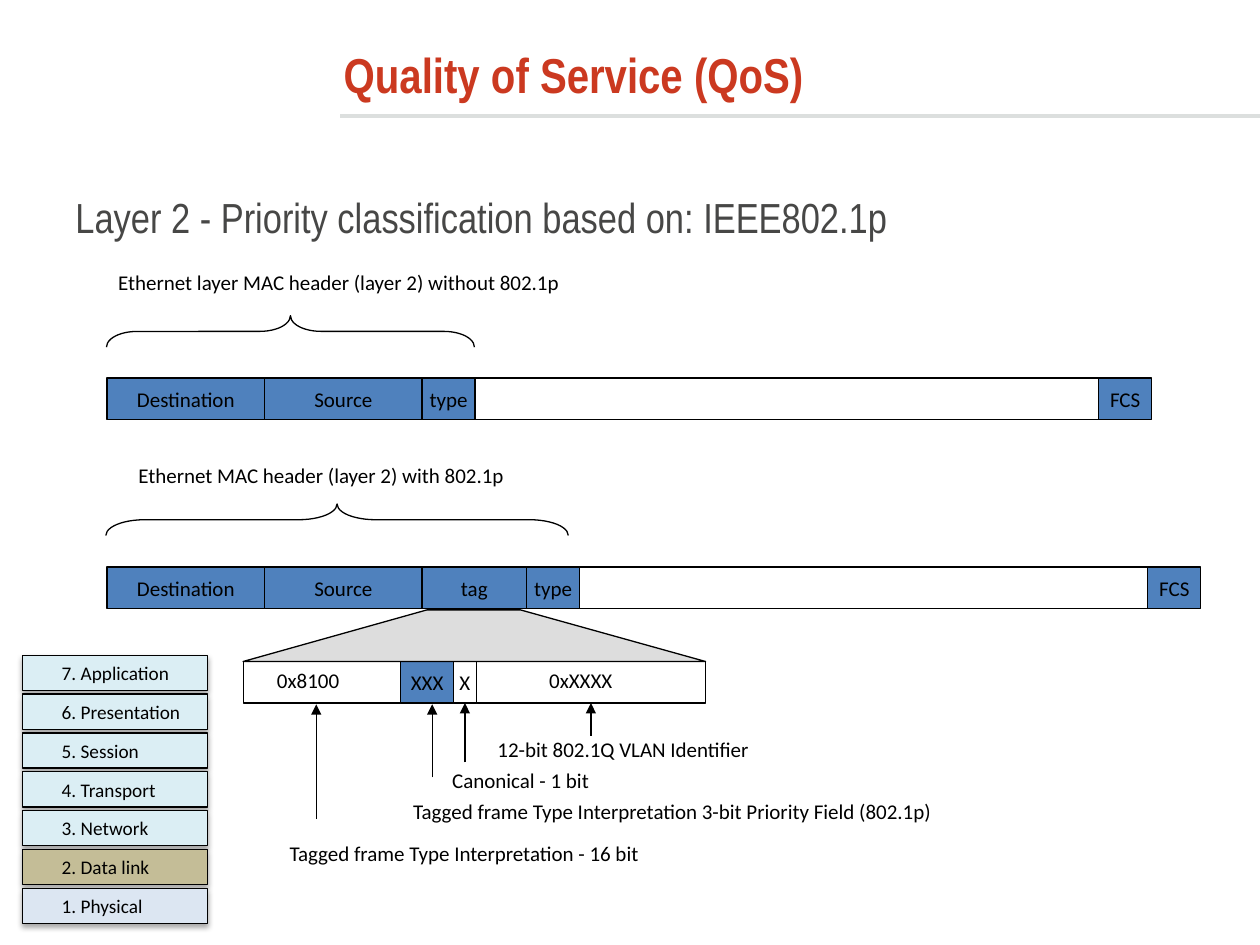
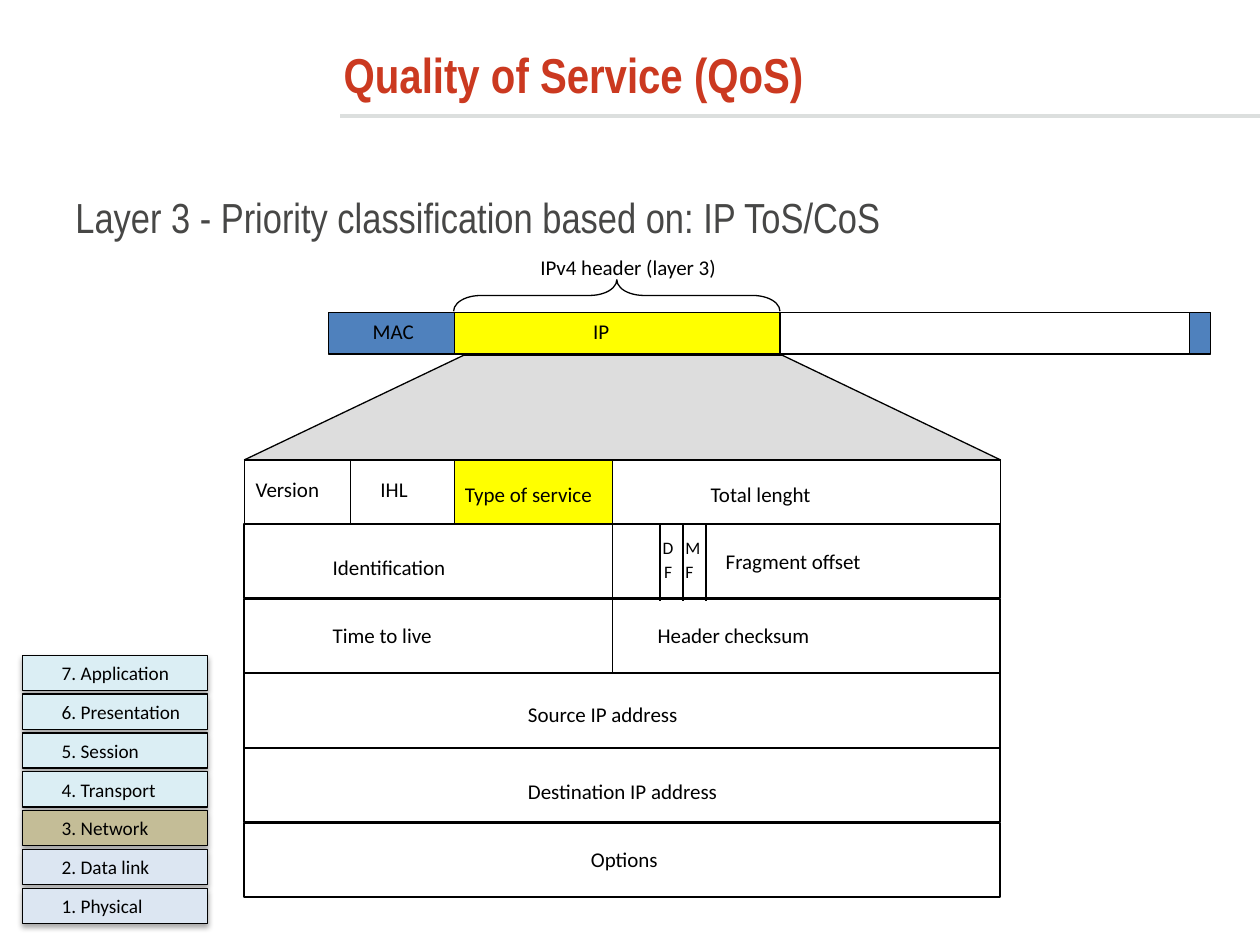
from lxml.etree import SubElement
from pptx import Presentation
from pptx.dml.color import RGBColor
from pptx.enum.shapes import MSO_CONNECTOR, MSO_SHAPE
from pptx.enum.text import MSO_ANCHOR, PP_ALIGN
from pptx.oxml.ns import qn
from pptx.util import Inches, Pt

RECTANGLE = MSO_SHAPE.RECTANGLE
LEFT_BRACE = MSO_SHAPE.LEFT_BRACE
STRAIGHT = MSO_CONNECTOR.STRAIGHT
MIDDLE = MSO_ANCHOR.MIDDLE
LEFT, CENTER = PP_ALIGN.LEFT, PP_ALIGN.CENTER

BLACK = RGBColor(0x00, 0x00, 0x00)
WHITE = RGBColor(0xFF, 0xFF, 0xFF)
RED = RGBColor(0xCB, 0x39, 0x20)
DARK_GRAY = RGBColor(0x47, 0x47, 0x46)
RULE_GRAY = RGBColor(0xDC, 0xDF, 0xDE)
ZOOM_GRAY = RGBColor(0xDD, 0xDD, 0xDD)
BLUE = RGBColor(0x4F, 0x81, 0xBD)
YELLOW = RGBColor(0xFF, 0xFF, 0x00)
UPPER_LAYER = RGBColor(0xDB, 0xEE, 0xF4)
CURRENT_LAYER = RGBColor(0xC4, 0xBD, 0x97)
LOWER_LAYER = RGBColor(0xDC, 0xE6, 0xF2)

LAYERS = ["Application", "Presentation", "Session", "Transport",
          "Network", "Data link", "Physical"]


def add_cell(shapes, x, y, w, h, fill, text="", size=12, line=0.75, align=CENTER):
    cell = shapes.add_shape(RECTANGLE, Inches(x), Inches(y), Inches(w), Inches(h))
    cell.shadow.inherit = False
    cell.fill.solid()
    cell.fill.fore_color.rgb = fill
    cell.line.color.rgb = BLACK
    cell.line.width = Pt(line)
    frame = cell.text_frame
    frame.word_wrap = False
    frame.vertical_anchor = MIDDLE
    frame.text = text
    paragraph = frame.paragraphs[0]
    paragraph.alignment = align
    paragraph.font.name = "Calibri"
    paragraph.font.size = Pt(size)
    paragraph.font.color.rgb = BLACK
    return cell


def add_label(slide, x, y, w, h, text, size=12, color=BLACK, font="Calibri", inset=True):
    frame = slide.shapes.add_textbox(Inches(x), Inches(y), Inches(w), Inches(h)).text_frame
    frame.word_wrap = False
    if not inset:
        frame.margin_left = frame.margin_right = frame.margin_top = frame.margin_bottom = 0
    frame.text = text
    run_font = frame.paragraphs[0].runs[0].font
    run_font.name = font
    run_font.size = Pt(size)
    run_font.color.rgb = color
    return frame


prs = Presentation()
prs.slide_width = Inches(10)
prs.slide_height = Inches(7.5)

slides = []
for current, topic in [(2, "IEEE802.1p"), (3, "IP ToS/CoS")]:
    slide = prs.slides.add_slide(prs.slide_layouts[6])
    slides.append(slide)
    subtitle = f"Layer {current} - Priority classification based on: {topic}"
    add_label(slide, 0.5, 1.47, 8.9, 0.67, subtitle, 24, DARK_GRAY,
              "Arial Narrow").word_wrap = True
    title = add_label(slide, 2.63, 0.15, 6.87, 0.88, "Quality of Service (QoS)", 28, RED,
                      "Arial Narrow")
    title.word_wrap = True
    title.vertical_anchor = MIDDLE
    title.paragraphs[0].runs[0].font.bold = True

    stack = slide.shapes.add_group_shape()
    for i, layer in enumerate(LAYERS):
        number = 7 - i
        fill = UPPER_LAYER if number > current else LOWER_LAYER
        if number == current:
            fill = CURRENT_LAYER
        level = add_cell(stack.shapes, 0.18, 5.2 + 1.85 * i / 6, 1.47, 0.28, fill,
                         f"{number}. {layer}", 11, align=LEFT)
        level.text_frame.word_wrap = True
        level.text_frame.margin_left = Inches(0.31)
        effects = level.element.spPr.find(qn("a:effectLst"))
        shadow = SubElement(effects, qn("a:outerShdw"), blurRad=str(Pt(3.1)),
                            dist=str(Pt(1.8)), dir="5400000", rotWithShape="0")
        shade = SubElement(shadow, qn("a:srgbClr"), val="000000")
        SubElement(shade, qn("a:alpha"), val="35000")
layer2, layer3 = slides

frame_rows = [
    (layer2, 0.85, 3, 0.33, [(1.25, BLUE, "Destination"), (1.25, BLUE, "Source"),
                             (0.42, BLUE, "type"), (4.95, WHITE, ""), (0.42, BLUE, "FCS")]),
    (layer2, 0.85, 4.5, 0.33, [(1.25, BLUE, "Destination"), (1.25, BLUE, "Source"),
                               (0.83, BLUE, "tag"), (0.42, BLUE, "type"),
                               (4.51, WHITE, ""), (0.42, BLUE, "FCS")]),
    (layer3, 2.61, 2.48, 0.33, [(1, BLUE, ""), (2.58, YELLOW, ""), (3.25, WHITE, ""),
                                (0.17, BLUE, "")]),
    (layer3, 1.94, 3.65, 0.51, [(0.84, WHITE, ""), (0.83, WHITE, ""), (1.25, YELLOW, ""),
                                (3.08, WHITE, "")]),
    (layer2, 1.93, 5.25, 0.33, [(1.25, WHITE, ""), (0.42, BLUE, "XXX"), (0.18, WHITE, "X"),
                                (1.82, WHITE, "")]),
]
for slide, x, y, h, cells in frame_rows:
    tag_fields = []
    for w, fill, text in cells:
        tag_fields.append(add_cell(slide.shapes, x, y, w, h, fill, text))
        x += w
canonical_bit, vlan_id = tag_fields[2:]

for i in range(5):
    add_cell(layer3.shapes, 1.94, 4.16 + 2.37 * i / 4, 6, 0.59, WHITE, line=1.13)

zooms = [(layer2, 5.25, 4.84, [1.93, 3.39, 4.13, 5.6]),
         (layer3, 3.65, 2.82, [1.94, 3.68, 6.21, 7.94])]
for slide, bottom, top, corners in zooms:
    outline = [(Inches(x), Inches(y)) for x, y in zip(corners, [bottom, top, top, bottom])]
    builder = slide.shapes.build_freeform(*outline[0])
    builder.add_line_segments(outline[1:], close=True)
    zoom = builder.convert_to_shape()
    zoom.shadow.inherit = False
    zoom.fill.solid()
    zoom.fill.fore_color.rgb = ZOOM_GRAY
    zoom.line.color.rgb = BLACK
    zoom.line.width = Pt(0.75)

braces = [(layer2, 2.18, 1.17, 2.92, 0.97),
          (layer2, 2.55, 2.29, 3.67, 1.22),
          (layer3, 4.77, 1.05, 2.59, 0.86)]
for slide, x, y, span, curl in braces:
    brace = slide.shapes.add_shape(LEFT_BRACE, Inches(x), Inches(y), Inches(0.25), Inches(span))
    brace.rotation = 90
    brace.adjustments[0] = curl
    brace.adjustments[1] = 0.5
    brace.shadow.inherit = False
    brace.fill.background()
    brace.line.color.rgb = BLACK
    brace.line.width = Pt(0.75)

captions = [
    (layer2, 0.84, 2.09, 4, "Ethernet layer MAC header (layer 2) without 802.1p"),
    (layer2, 1, 3.62, 3.36, "Ethernet MAC header (layer 2) with 802.1p"),
    (layer2, 2.1, 5.25, 0.74, "0x8100"),
    (layer2, 4.26, 5.25, 0.82, "0xXXXX"),
    (layer2, 3.85, 5.8, 2.37, "12-bit 802.1Q VLAN Identifier"),
    (layer2, 3.49, 6.04, 1.4, "Canonical - 1 bit"),
    (layer2, 3.18, 6.29, 5, "Tagged frame Type Interpretation 3-bit Priority Field (802.1p)"),
    (layer2, 2.2, 6.62, 3.24, "Tagged frame Type Interpretation - 16 bit"),
    (layer3, 4.19, 1.97, 1.65, "IPv4 header (layer 3)"),
    (layer3, 2.86, 2.48, 0.57, "MAC"),
    (layer3, 4.61, 2.48, 0.36, "IP"),
]
for slide, x, y, w, text in captions:
    caption = add_label(slide, x, y, w, 0.3, text)
    caption.word_wrap = w == 5

header_fields = [
    (2.03, 3.78, 0.56, "Version"), (3.02, 3.78, 0.26, "IHL"),
    (3.69, 3.82, 1.13, "Type of service"), (5.64, 3.82, 0.88, "Total lenght"),
    (2.64, 4.4, 0.93, "Identification"), (5.76, 4.35, 1.17, "Fragment offset"),
    (2.64, 4.94, 0.85, "Time to live"), (5.22, 4.94, 1.34, "Header checksum"),
    (4.19, 5.57, 1.37, "Source IP address"), (4.19, 6.18, 1.67, "Destination IP address"),
    (4.69, 6.72, 0.57, "Options"),
]
for x, y, w, text in header_fields:
    add_label(layer3, x, y, w, 0.2, text, inset=False)
for x, y, w, letter in [(5.26, 4.26, 0.1, "D"), (5.27, 4.45, 0.09, "F"),
                        (5.44, 4.26, 0.12, "M"), (5.44, 4.45, 0.09, "F")]:
    add_label(layer3, x, y, w, 0.17, letter, 10, inset=False)

lines = [(slide, 2.7, 0.92, 10, 0.92, RULE_GRAY, 2, False, None) for slide in slides]
lines += [(layer3, x, 4.17, x, 4.77, BLACK, 1.13, False, None) for x in (5.24, 5.42, 5.6)]
lines.append((layer3, 4.86, 4.16, 4.86, 5.35, BLACK, 0.75, False, None))
lines += [(layer2, x, start, x, 5.59, BLACK, 0.75, True, field)
          for x, start, field in [(2.51, 6.5, None), (3.43, 6.17, None),
                                  (3.69, 6.05, canonical_bit), (4.69, 5.84, vlan_id)]]
for slide, x1, y1, x2, y2, color, width, arrow, field in lines:
    line = slide.shapes.add_connector(STRAIGHT, Inches(x1), Inches(y1), Inches(x2), Inches(y2))
    line.line.color.rgb = color
    line.line.width = Pt(width)
    properties = line.element.spPr
    if arrow:
        SubElement(properties.find(qn("a:ln")), qn("a:tailEnd"), type="triangle")
    SubElement(properties, qn("a:effectLst"))
    if field is not None:
        line.end_connect(field, 2)

prs.save("out.pptx")
